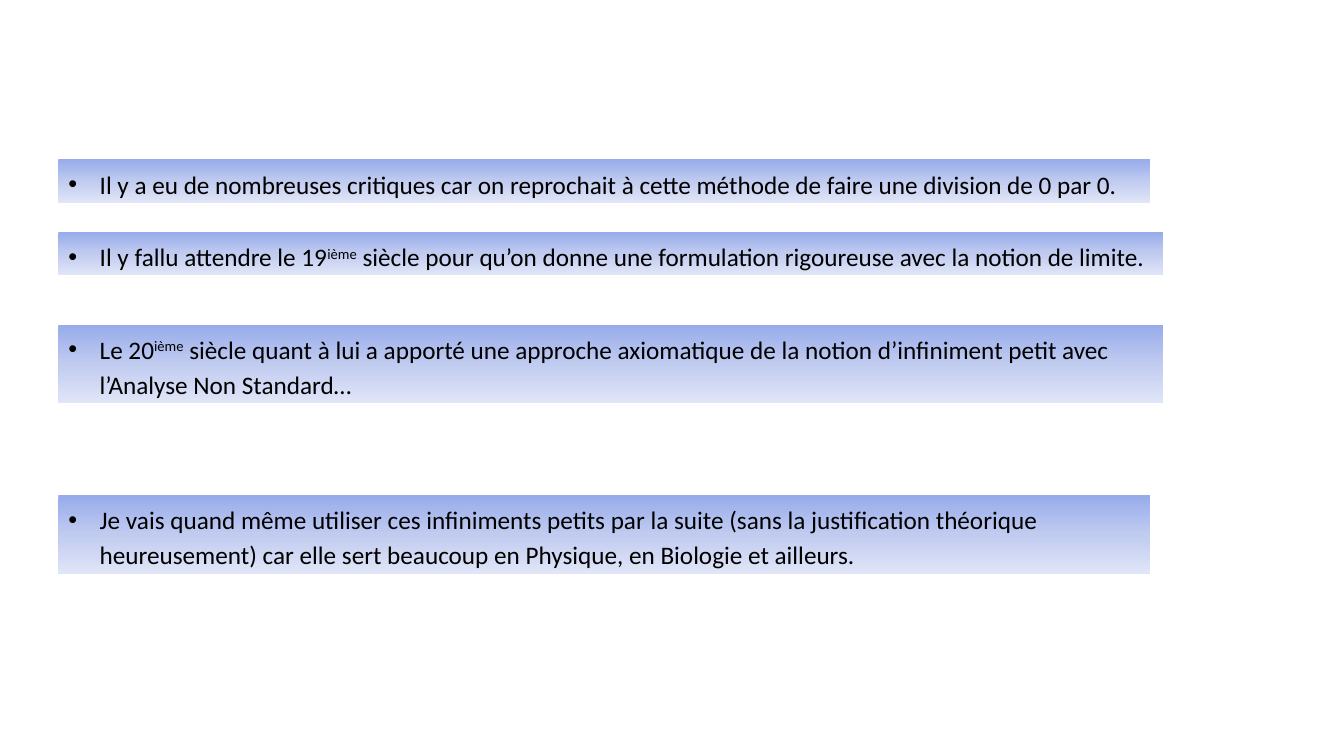
from dataclasses import dataclass

import lxml.etree
import pptx
import pptx.dml.color
import pptx.enum.text
import pptx.oxml.ns
import pptx.util

# Grid: 160 columns by 100 rows
SLIDE_WIDTH = pptx.util.Inches(13.33)
SLIDE_HEIGHT = pptx.util.Inches(7.5)
COLUMN = SLIDE_WIDTH / 160
ROW = SLIDE_HEIGHT / 100

LEFT_COLUMN = 6.95
NARROW, WIDE = 130, 131.5
ONE_LINE, TWO_LINES = 5.73, 10.4

FONT_NAME = "Calibri"
FONT_SIZE = pptx.util.Pt(18)
INDENT = pptx.util.Inches(0.31)
TEXT_COLOUR = "000000"
GRADIENT_STOPS = {0: "96ABEA", 50: "C0CBF0", 100: "E0E5F7"}


@dataclass
class Remark:
    top: float
    columns: float
    rows: float
    before: str
    superscript: str = ""
    after: str = ""


REMARKS = [
    Remark(21.07, NARROW, ONE_LINE,
           "Il y a eu de nombreuses critiques car on reprochait à cette méthode "
           "de faire une division de 0 par 0."),
    Remark(30.67, WIDE, ONE_LINE, "Il y fallu attendre le 19", "ième",
           " siècle pour qu’on donne une formulation rigoureuse avec la notion de limite."),
    Remark(42.93, WIDE, TWO_LINES, "Le 20", "ième",
           " siècle quant à lui a apporté une approche axiomatique de la notion "
           "d’infiniment petit avec l’Analyse Non Standard…"),
    Remark(65.47, NARROW, TWO_LINES,
           "Je vais quand même utiliser ces infiniments petits par la suite (sans la "
           "justification théorique heureusement) car elle sert beaucoup en Physique, "
           "en Biologie et ailleurs."),
]


def colour(value: str) -> pptx.dml.color.RGBColor:
    return pptx.dml.color.RGBColor.from_string(value)


def add_element(parent, tag: str, **attributes: str):
    return lxml.etree.SubElement(parent, pptx.oxml.ns.qn(tag), attributes)


def fill_with_gradient(shape) -> None:
    shape.fill.gradient()
    shape.fill.gradient_angle = 270
    stop_list = next(shape.element.iter(pptx.oxml.ns.qn("a:gsLst")))
    for stop in list(stop_list):
        stop_list.remove(stop)
    for percent, value in GRADIENT_STOPS.items():
        stop = add_element(stop_list, "a:gs", pos=str(percent * 1000))
        add_element(stop, "a:srgbClr", val=value)


def format_bullet(paragraph) -> None:
    properties = paragraph._p.get_or_add_pPr()
    properties.set("marL", str(INDENT))
    properties.set("indent", str(-INDENT))
    add_element(properties, "a:buFont", typeface="Arial")
    add_element(properties, "a:buChar", char="•")
    paragraph.alignment = pptx.enum.text.PP_ALIGN.LEFT
    paragraph.line_spacing = 1.15
    paragraph.space_before = pptx.util.Pt(0)
    paragraph.space_after = pptx.util.Pt(10)


def add_run(paragraph, text: str, raised: bool = False) -> None:
    run = paragraph.add_run()
    run.text = text
    run.font.name = FONT_NAME
    run.font.size = FONT_SIZE
    run.font.bold = False
    run.font.color.rgb = colour(TEXT_COLOUR)
    if raised:
        run.font._element.set("baseline", "30000")


def draw_remark(shape, remark: Remark) -> None:
    shape.left = round(LEFT_COLUMN * COLUMN)
    shape.top = round(remark.top * ROW)
    shape.width = round(remark.columns * COLUMN)
    shape.height = round(remark.rows * ROW)
    fill_with_gradient(shape)

    # The grid fixes the height, so the box must not resize itself
    frame = shape.text_frame
    frame.word_wrap = True
    frame.auto_size = pptx.enum.text.MSO_AUTO_SIZE.NONE
    frame.vertical_anchor = pptx.enum.text.MSO_ANCHOR.TOP
    paragraph = frame.paragraphs[0]
    format_bullet(paragraph)
    add_run(paragraph, remark.before)
    if remark.superscript:
        add_run(paragraph, remark.superscript, raised=True)
        add_run(paragraph, remark.after)


def main() -> None:
    presentation = pptx.Presentation()
    presentation.slide_width = SLIDE_WIDTH
    presentation.slide_height = SLIDE_HEIGHT

    # The comparison layout offers four body placeholders, one per remark
    layout = presentation.slide_layouts.get_by_name("Comparison")
    slide = presentation.slides.add_slide(layout)
    title, *bodies = slide.placeholders
    title.element.getparent().remove(title.element)
    for body, remark in zip(bodies, REMARKS):
        draw_remark(body, remark)

    presentation.save("out.pptx")


if __name__ == "__main__":
    main()
